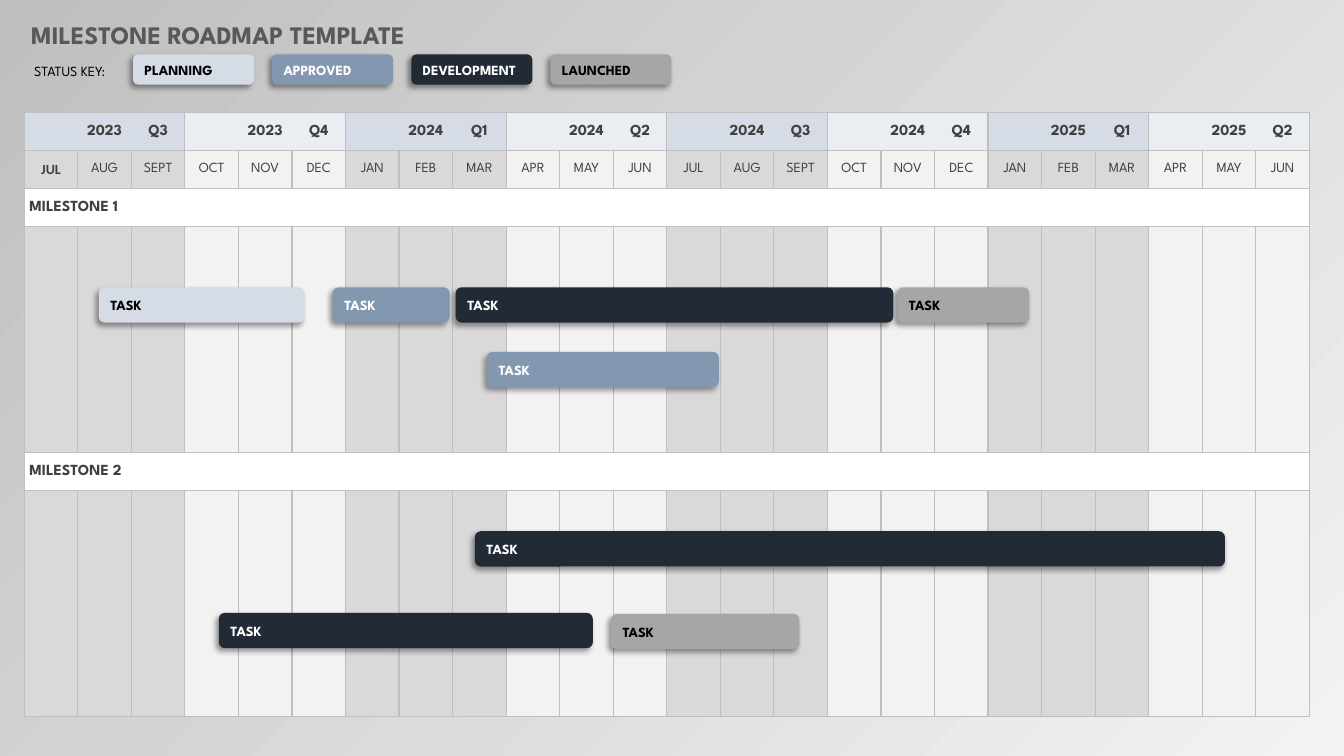
from pptx import Presentation
from pptx.dml.color import RGBColor
from pptx.enum.shapes import MSO_SHAPE as Shape
from pptx.enum.text import MSO_ANCHOR as Anchor, PP_ALIGN as Align
from pptx.oxml import parse_xml
from pptx.oxml.ns import nsdecls
from pptx.util import Inches, Pt

FONT = "League Spartan"
GRID_LINE = "BFBFBF"
TEXT_GREY = "404040"

# Status: fill, text colour
STATUSES = {
    "PLANNING": ("D6DCE5", "000000"),
    "APPROVED": ("8497B0", "FFFFFF"),
    "DEVELOPMENT": ("222A35", "FFFFFF"),
    "LAUNCHED": ("A6A6A6", "000000"),
}

QUARTERS = [("2023", "Q3"), ("2023", "Q4"), ("2024", "Q1"), ("2024", "Q2"),
            ("2024", "Q3"), ("2024", "Q4"), ("2025", "Q1"), ("2025", "Q2")]
MONTHS = ["JUL", "AUG", "SEPT", "OCT", "NOV", "DEC",
          "JAN", "FEB", "MAR", "APR", "MAY", "JUN"]
COLUMNS = 3 * len(QUARTERS)
ROW_HEIGHTS = [0.37, 0.38, 0.38, 2.24, 0.38, 2.24]
MILESTONES = {2: "MILESTONE 1", 4: "MILESTONE 2"}

# Task: status, left, top, width
TASKS = [
    ("PLANNING", 0.98, 2.85, 2.04),
    ("APPROVED", 3.3, 2.85, 1.16),
    ("APPROVED", 4.83, 3.49, 2.3),
    ("LAUNCHED", 8.9, 2.85, 1.31),
    ("DEVELOPMENT", 4.52, 2.85, 4.34),
    ("DEVELOPMENT", 4.71, 5.27, 7.44),
    ("LAUNCHED", 6.06, 6.09, 1.87),
    ("DEVELOPMENT", 2.17, 6.08, 3.71),
]


def color(hex_string):
    return RGBColor.from_string(hex_string)


def add_run(paragraph, text, size, hex_color, bold=False, font=FONT):
    run = paragraph.add_run()
    run.text = text
    run.font.name = font
    run.font.size = Pt(size)
    run.font.bold = bold
    run.font.color.rgb = color(hex_color)


def set_background(slide):
    fill = slide.background.fill
    fill.gradient()
    fill.gradient_angle = 135
    for stop, hex_color in zip(fill.gradient_stops, ("F2F2F2", "BFBFBF")):
        stop.color.rgb = color(hex_color)


def set_title(slide, text):
    title = slide.shapes.title
    title.left, title.top = Inches(0.21), Inches(0.14)
    title.width, title.height = Inches(9.06), Inches(0.4)
    title.text_frame.vertical_anchor = Anchor.TOP
    paragraph = title.text_frame.paragraphs[0]
    paragraph.alignment = Align.LEFT
    add_run(paragraph, text, 18, "595959", bold=True)


def add_label(slide, text, left, top, width, height):
    box = slide.shapes.add_textbox(Inches(left), Inches(top),
                                   Inches(width), Inches(height))
    box.text_frame.word_wrap = True
    add_run(box.text_frame.paragraphs[0], text, 10, "000000")


def add_bar(slide, status, text, left, top, width, height):
    fill_color, text_color = STATUSES[status]
    bar = slide.shapes.add_shape(Shape.ROUNDED_RECTANGLE, Inches(left),
                                 Inches(top), Inches(width), Inches(height))
    bar.fill.solid()
    bar.fill.fore_color.rgb = color(fill_color)
    bar.line.fill.background()
    bar._element.spPr.append(parse_xml(
        f'<a:effectLst {nsdecls("a")}><a:outerShdw blurRad="{Pt(4)}" '
        f'dist="{Pt(3)}" dir="8100000" algn="tr" rotWithShape="0">'
        '<a:srgbClr val="000000"><a:alpha val="40000"/></a:srgbClr>'
        '</a:outerShdw></a:effectLst>'))
    bar.text_frame.vertical_anchor = Anchor.MIDDLE
    paragraph = bar.text_frame.paragraphs[0]
    paragraph.alignment = Align.LEFT
    add_run(paragraph, text, 10, text_color, bold=True)


def format_cell(cell, fill_color, sides):
    cell.margin_left = cell.margin_right = Inches(0.05)
    cell.margin_top = cell.margin_bottom = 0
    cell.vertical_anchor = Anchor.MIDDLE
    properties = cell._tc.get_or_add_tcPr()
    for side in "LRTB":
        paint = (f'<a:solidFill><a:srgbClr val="{GRID_LINE}"/></a:solidFill>'
                 if side in sides else "<a:noFill/>")
        properties.append(parse_xml(
            f'<a:ln{side} {nsdecls("a")} w="{Pt(1)}">{paint}</a:ln{side}>'))
    cell.fill.solid()
    cell.fill.fore_color.rgb = color(fill_color)


def write_cell(cell, text, size, bold=True, font=FONT, alignment=Align.CENTER):
    paragraph = cell.text_frame.paragraphs[0]
    paragraph.alignment = alignment
    add_run(paragraph, text, size, TEXT_GREY, bold, font)


def add_roadmap(slide):
    frame = slide.shapes.add_table(len(ROW_HEIGHTS), COLUMNS, Inches(0.24),
                                   Inches(1.12), Inches(12.75),
                                   Inches(sum(ROW_HEIGHTS)))
    table = frame.table
    table.first_row = table.horz_banding = False
    for row, height in zip(table.rows, ROW_HEIGHTS):
        row.height = Inches(height)

    # Fills alternate by quarter; quarter headings have no inner lines
    for row in range(len(ROW_HEIGHTS)):
        for column in range(COLUMNS):
            quarter, month = divmod(column, 3)
            sides = "LRTB"
            if row == 0:
                fill_color = ("D6DCE5", "EAEEF3")[quarter % 2]
                sides = ("LTB", "TB", "RTB")[month]
            elif row in MILESTONES:
                fill_color = "FFFFFF"
            else:
                fill_color = ("D9D9D9", "F2F2F2")[quarter % 2]
            format_cell(table.cell(row, column), fill_color, sides)

    # Quarter and month headings
    for index, (year, quarter) in enumerate(QUARTERS):
        write_cell(table.cell(0, 3 * index + 1), year, 11)
        write_cell(table.cell(0, 3 * index + 2), quarter, 11)
    for column in range(COLUMNS):
        first = column == 0
        write_cell(table.cell(1, column), MONTHS[column % 12], 10,
                   bold=first, font="Calibri" if first else FONT)

    # Milestone rows
    for row, name in MILESTONES.items():
        table.cell(row, 0).merge(table.cell(row, COLUMNS - 1))
        write_cell(table.cell(row, 0), name, 11, alignment=Align.LEFT)


def main():
    presentation = Presentation()
    presentation.slide_width = Inches(13.33)
    presentation.slide_height = Inches(7.5)
    slide = presentation.slides.add_slide(presentation.slide_layouts[5])
    set_background(slide)
    set_title(slide, "MILESTONE ROADMAP TEMPLATE")

    # Status key
    add_label(slide, "STATUS KEY:", 0.24, 0.57, 1.09, 0.27)
    for index, status in enumerate(STATUSES):
        add_bar(slide, status, status, 1.32 + 1.38 * index, 0.54, 1.2, 0.3)

    # Roadmap and its tasks
    add_roadmap(slide)
    for status, left, top, width in TASKS:
        add_bar(slide, status, "TASK", left, top, width, 0.35)

    presentation.save("out.pptx")


if __name__ == "__main__":
    main()
